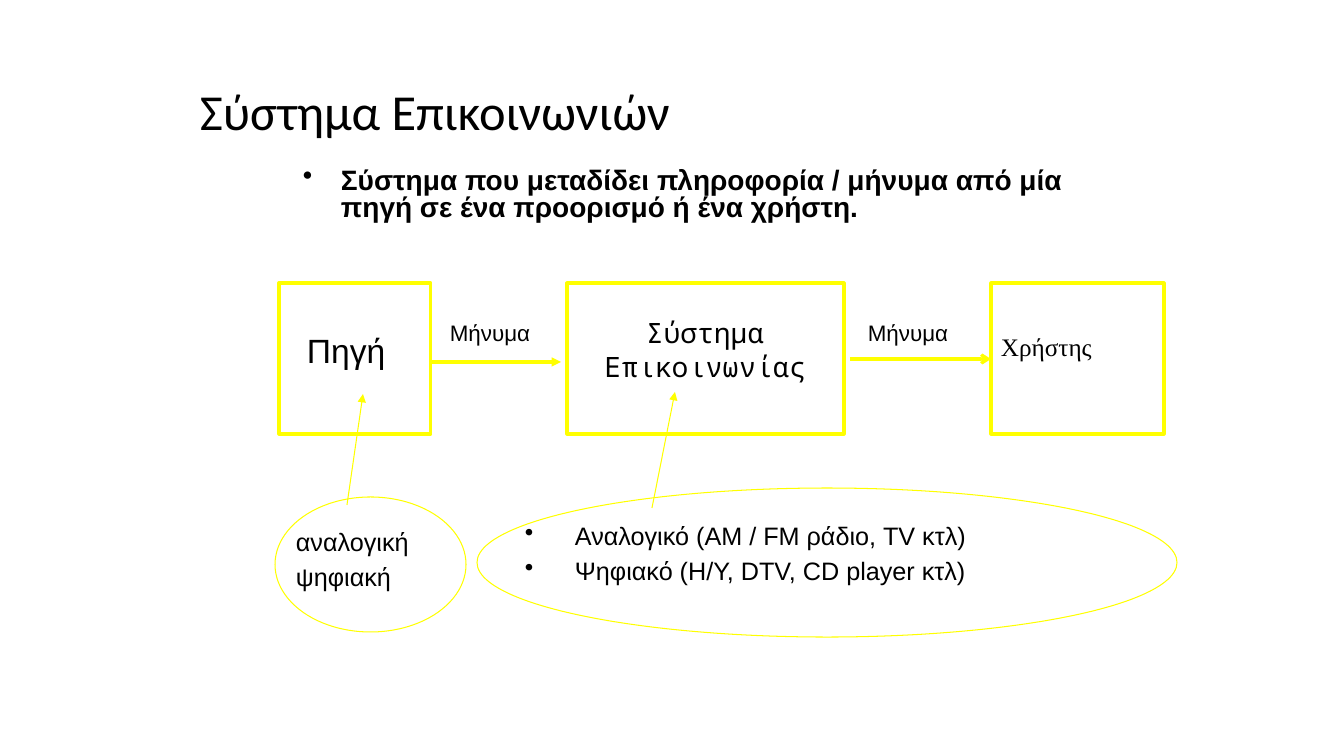
import pptx
import pptx.util
import pptx.dml.color
import pptx.enum.shapes
import pptx.enum.text
import pptx.oxml.ns
import lxml.etree

px = 914400 / 100.8
hues = {"line": "FFFF00", "text": "000000"}
kinds = pptx.enum.shapes.MSO_SHAPE
align = pptx.enum.text.PP_ALIGN


def scale(*nums):
    return [round(num * px) for num in nums]


def write(place, lines, size, font="Arial", bold=False, wrap=True, dent=0,
          dot=False, space=None, gap=0, side=align.LEFT, low=False):
    box = deck_page.shapes.add_textbox(*scale(*place))
    frame = box.text_frame
    frame.word_wrap = wrap
    if low:
        frame.vertical_anchor = pptx.enum.text.MSO_ANCHOR.BOTTOM
    frame.text = "\n".join(lines)
    for par in frame.paragraphs:
        par.alignment = side
        par.space_before = pptx.util.Pt(gap)
        if space:
            par.line_spacing = space
        props = par._p.get_or_add_pPr()
        props.set("marL", str(scale(dent)[0]))
        if dot:
            props.set("indent", str(scale(-dent)[0]))
            mark = lxml.etree.SubElement(props, pptx.oxml.ns.qn("a:buChar"))
            mark.set("char", "•")
        for run in par.runs:
            run.font.size = pptx.util.Pt(size)
            run.font.name = font
            run.font.bold = bold
            run.font.color.rgb = pptx.dml.color.RGBColor.from_string(hues["text"])


deck = pptx.Presentation()
deck.slide_width, deck.slide_height = scale(1344, 756)
deck_page = deck.slides.add_slide(deck.slide_layouts[6])
yellow = pptx.dml.color.RGBColor.from_string(hues["line"])

write((190, 80, 809, 66), ["Σύστημα Επικοινωνιών"], 36, "Calibri", space=0.9, low=True)
write((293, 164, 857, 74),
      ["Σύστημα που μεταδίδει πληροφορία / μήνυμα από μία πηγή σε ένα προορισμό ή ένα χρήστη."],
      20, bold=True, dent=38, dot=True, space=0.8)

for kind, place, width in [
    (kinds.RECTANGLE, (279, 283, 152, 151), 2.25),
    (kinds.RECTANGLE, (567, 283, 277, 151), 2.25),
    (kinds.RECTANGLE, (991, 283, 173, 151), 2.25),
    (kinds.OVAL, (275, 497, 191, 135), 0.75),
    (kinds.OVAL, (477, 488, 700, 149), 0.75),
]:
    shape = deck_page.shapes.add_shape(kind, *scale(*place))
    shape.shadow.inherit = False
    shape.fill.background()
    shape.line.color.rgb = yellow
    shape.line.width = pptx.util.Pt(width)

for ends, width, head in [
    ((431, 362, 561, 362), 2.25, "triangle"),
    ((850, 359, 991, 359), 2.25, "arrow"),
    ((347, 505, 363, 394), 0.75, "triangle"),
    ((652, 508, 675, 392), 0.75, "triangle"),
]:
    arrow = deck_page.shapes.add_connector(
        pptx.enum.shapes.MSO_CONNECTOR.STRAIGHT, *scale(*ends))
    arrow.line.color.rgb = yellow
    arrow.line.width = pptx.util.Pt(width)
    tip = lxml.etree.SubElement(arrow.line._get_or_add_ln(), pptx.oxml.ns.qn("a:tailEnd"))
    tip.set("type", head)
    lxml.etree.SubElement(arrow._element.spPr, pptx.oxml.ns.qn("a:effectLst"))

write((297, 325, 153, 50), ["Πηγή"], 24)
write((534, 311, 305, 84), ["Σύστημα Επικοινωνίας"], 20, "Noto Sans Mono",
      dent=38, side=align.CENTER)
write((991, 326, 174, 40), ["Χρήστης"], 18, "Times New Roman")
for left in (440, 858):
    write((left, 314, 102, 37), ["Μήνυμα"], 16, wrap=False)

write((286, 521, 134, 78), ["αναλογική", "ψηφιακή"], 18, wrap=False, gap=4)
write((515, 515, 653, 78),
      ["Αναλογικό (ΑΜ / FM ράδιο, TV κτλ)", "Ψηφιακό (H/Y, DTV, CD player κτλ)"],
      18, dent=50, dot=True, gap=4)

deck.save("out.pptx")
